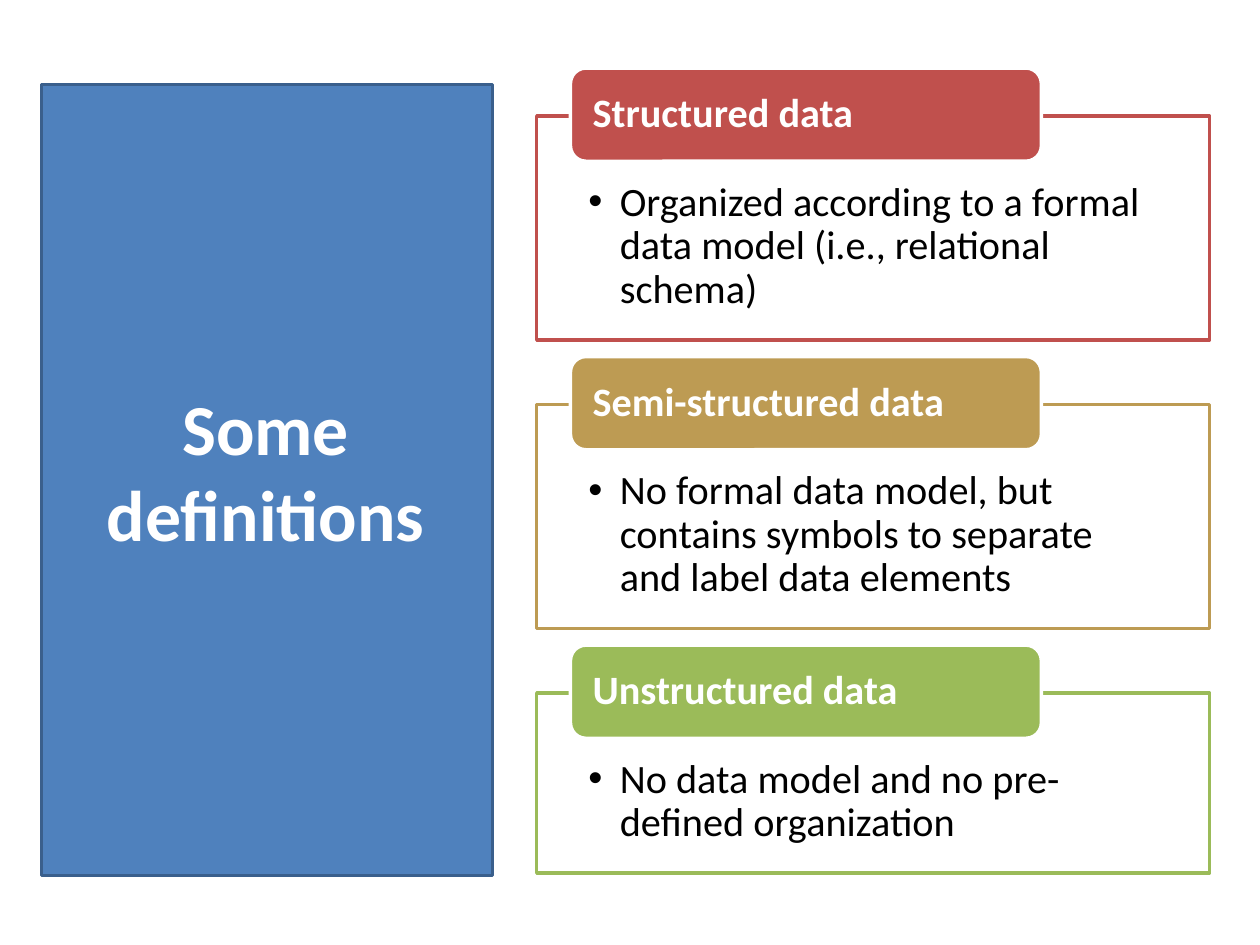
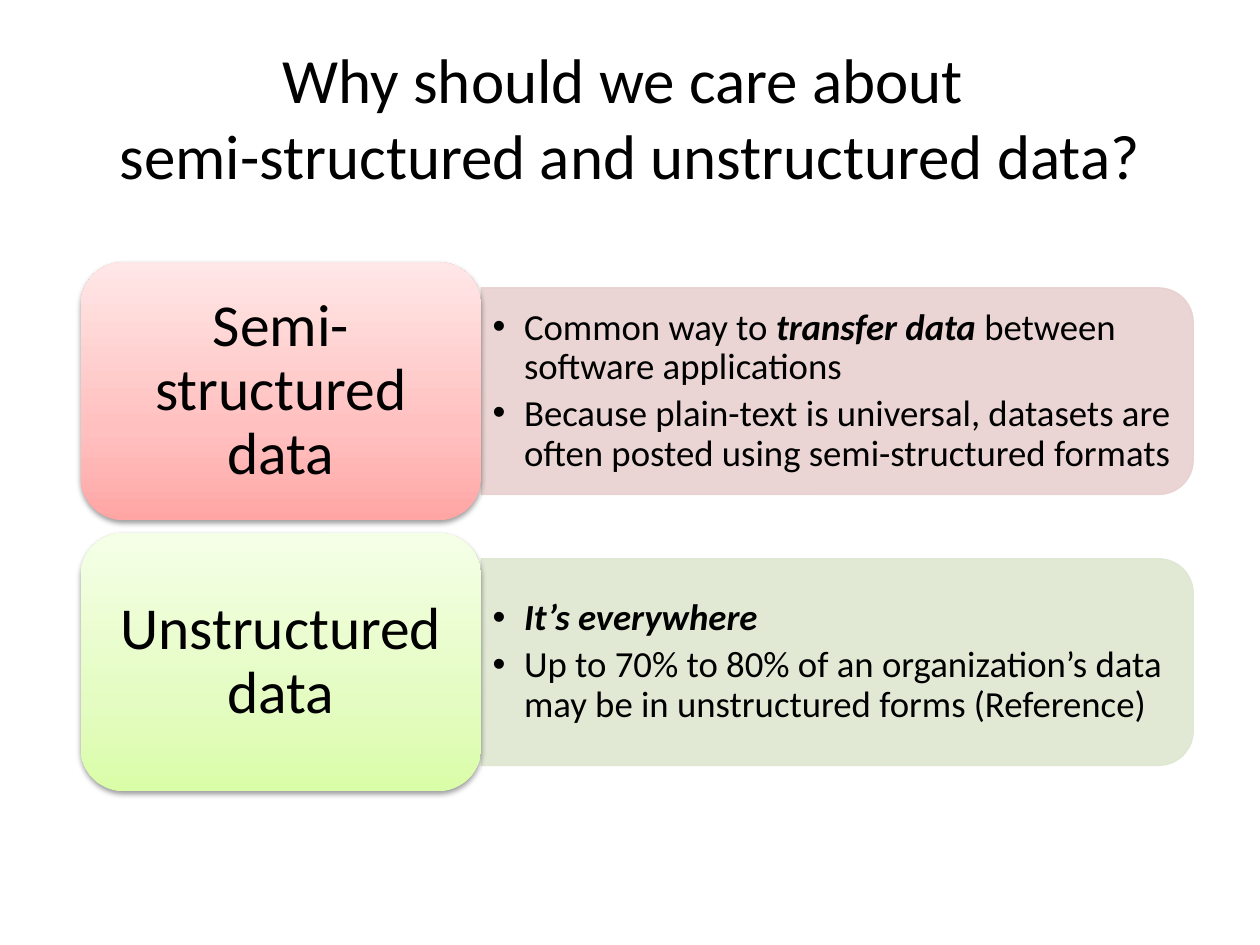
from collections import namedtuple

from lxml import etree
from pptx import Presentation
from pptx.dml.color import RGBColor
from pptx.enum.shapes import MSO_SHAPE as Shape
from pptx.enum.text import MSO_ANCHOR as Anchor, MSO_AUTO_SIZE as AutoSize, PP_ALIGN as Align
from pptx.oxml import parse_xml
from pptx.oxml.ns import nsdecls, qn
from pptx.util import Emu, Inches, Pt

# Slide grid: 100 columns by 75 rows
SLIDE_WIDTH, SLIDE_HEIGHT = Inches(10), Inches(7.5)
COLUMN, ROW = SLIDE_WIDTH / 100, SLIDE_HEIGHT / 75
Box = namedtuple("Box", "left top width height")

FONT = "Calibri"
WHITE = RGBColor(0xFF, 0xFF, 0xFF)
BLACK = RGBColor(0x00, 0x00, 0x00)
BLUE = RGBColor(0x4F, 0x81, 0xBD)
DARK_BLUE = RGBColor(0x3A, 0x5F, 0x8C)
RED = RGBColor(0xC0, 0x50, 0x4D)
OCHRE = RGBColor(0xBD, 0x9B, 0x53)
GREEN = RGBColor(0x9B, 0xBB, 0x59)
PALE_RED = RGBColor(0xE8, 0xD0, 0xD0)
PALE_GREEN = RGBColor(0xDE, 0xE7, 0xD1)
# Gradient colours run from the bottom edge to the top edge
RED_GRADIENT = (RGBColor(0xFF, 0xA6, 0xA5), RGBColor(0xFF, 0xC0, 0xBF), RGBColor(0xFF, 0xE7, 0xE7))
GREEN_GRADIENT = (RGBColor(0xDA, 0xFD, 0xA7), RGBColor(0xE4, 0xFC, 0xC2), RGBColor(0xF5, 0xFF, 0xE7))
GRADIENT_STOPS = (0, 35, 100)

BODY_INSETS = (0.41, 0.52, 0.41, 0.18)
TAB_INSETS = (0.14, 0, 0.14, 0)
BAR_INSETS = (0.09, 0.04, 0.09, 0.04)
PANEL_INSETS = (0.14, 0.07, 0.14, 0.07)


# ---- Shared helpers ----
def to_emu(box):
    return [Emu(round(length * unit)) for length, unit in zip(box, (COLUMN, ROW, COLUMN, ROW))]


def set_opacity(fill_parent, percent):
    """Add an alpha value to each solid colour directly below an element."""
    for color in fill_parent.findall(f"{qn('a:solidFill')}/{qn('a:srgbClr')}"):
        etree.SubElement(color, qn("a:alpha")).set("val", str(percent * 1000))


def add_block(slide, kind, box, fill=None, line=None, line_width=2):
    shape = slide.shapes.add_shape(kind, *to_emu(box))
    shape.shadow.inherit = False
    if fill is not None:
        shape.fill.solid()
        shape.fill.fore_color.rgb = fill
    if line is None:
        shape.line.fill.background()
    else:
        shape.line.color.rgb = line
        shape.line.width = Pt(line_width)
    return shape


def prepare_frame(frame, insets, anchor=Anchor.MIDDLE):
    frame.word_wrap = True
    frame.auto_size = AutoSize.NONE
    frame.vertical_anchor = anchor
    frame.margin_left, frame.margin_top, frame.margin_right, frame.margin_bottom = map(Inches, insets)


def add_run(paragraph, text, size, color=BLACK, bold=False, italic=False):
    run = paragraph.add_run()
    run.text = text
    font = run.font
    font.name, font.size, font.bold, font.italic = FONT, Pt(size), bold, italic
    font.color.rgb = color


def write_label(frame, text, size, color, bold, align):
    paragraph = frame.paragraphs[0]
    paragraph.alignment = align
    paragraph.line_spacing = 0.9
    add_run(paragraph, text, size, color, bold)


def write_bullets(frame, bullets, size):
    """Each bullet is a list of (text, emphasised) pairs."""
    for index, bullet in enumerate(bullets):
        paragraph = frame.add_paragraph() if index else frame.paragraphs[0]
        paragraph.alignment = Align.LEFT
        paragraph.line_spacing = 0.9
        paragraph.space_after = Pt(4)
        properties = paragraph._p.get_or_add_pPr()
        properties.set("marL", str(Inches(0.25)))
        properties.set("indent", str(Inches(-0.25)))
        etree.SubElement(properties, qn("a:buFont")).set("typeface", "Arial")
        etree.SubElement(properties, qn("a:buChar")).set("char", "•")
        for text, emphasised in bullet:
            add_run(paragraph, text, size, bold=emphasised, italic=emphasised)


def set_title(slide, box, lines, size, color, bold=False):
    title = slide.shapes.title
    title.left, title.top, title.width, title.height = to_emu(box)
    prepare_frame(title.text_frame, (0.1, 0.05, 0.1, 0.05))
    paragraph = title.text_frame.paragraphs[0]
    paragraph.alignment = Align.CENTER
    for index, line in enumerate(lines):
        if index:
            paragraph.add_line_break()
        add_run(paragraph, line, size, color, bold)
    return title


# ---- Definitions slide ----
def add_definition(slide, box, term, meaning, color):
    # Outlined body, starting halfway down the tab
    tab_height = 7.4
    drop = 3.8
    body = add_block(slide, Shape.RECTANGLE,
                     Box(box.left, box.top + drop, box.width, box.height - drop), WHITE, color)
    set_opacity(body._element.spPr, 90)
    prepare_frame(body.text_frame, BODY_INSETS, Anchor.TOP)
    write_bullets(body.text_frame, [[(meaning, False)]], 23)
    # Coloured tab with the term
    tab = add_block(slide, Shape.ROUNDED_RECTANGLE,
                    Box(box.left + 0.05 * box.width, box.top, 0.7 * box.width, tab_height), color, WHITE)
    prepare_frame(tab.text_frame, TAB_INSETS)
    write_label(tab.text_frame, term, 23, WHITE, True, Align.LEFT)


def build_definitions_slide(slide):
    # Title panel
    panel = Box(3.3, 6.7, 35.8, 62.8)
    add_block(slide, Shape.RECTANGLE, panel, BLUE, DARK_BLUE)
    title = set_title(slide, Box(panel.left + 3.8, panel.top + 4.4, 28, 52.4),
                      ["Some definitions"], 41, WHITE, True)
    slide.shapes._spTree.append(title._element)  # bring the title in front of its panel
    # Stack of definitions, each as tall as its number of text lines needs
    definitions = [
        ("Structured data", "Organized according to a formal data model (i.e., relational schema)", 3, RED),
        ("Semi-structured data",
         "No formal data model, but contains symbols to separate and label data elements", 3, OCHRE),
        ("Unstructured data", "No data model and no pre-defined organization", 2, GREEN),
    ]
    top, gap = 5.4, 1.3
    for term, meaning, line_count, color in definitions:
        height = 11.1 + 3.5 * line_count
        add_definition(slide, Box(42.6, top, 53.4, height), term, meaning, color)
        top += height + gap


# ---- Reasons slide ----
def style_panel(panel, colors):
    """Give a panel its vertical gradient and a soft shadow below."""
    properties = panel._element.spPr
    stops = "".join(f'<a:gs pos="{position * 1000}"><a:srgbClr val="{color}"/></a:gs>'
                    for position, color in zip(GRADIENT_STOPS, colors))
    gradient = parse_xml(f'<a:gradFill {nsdecls("a")} rotWithShape="1"><a:gsLst>{stops}</a:gsLst>'
                         '<a:lin ang="16200000" scaled="1"/></a:gradFill>')
    properties.find(qn("a:prstGeom")).addnext(gradient)
    shadow = parse_xml(f'<a:outerShdw {nsdecls("a")} blurRad="{Pt(3.1)}" dist="{Pt(1.6)}" dir="5400000" '
                       'rotWithShape="0"><a:srgbClr val="000000"><a:alpha val="38000"/></a:srgbClr>'
                       '</a:outerShdw>')
    properties.find(qn("a:effectLst")).append(shadow)


def add_reason(slide, box, heading, bullets, bar_color, gradient):
    panel_width = 0.36 * box.width
    bar = Box(box.left + panel_width, box.top + 0.1 * box.height,
              box.width - panel_width, 0.8 * box.height)
    # Bar turned a quarter so that its rounded corners face right
    turned = Box(bar.left + (bar.width - bar.height) / 2, bar.top + (bar.height - bar.width) / 2,
                 bar.height, bar.width)
    shape = add_block(slide, Shape.ROUND_2_SAME_RECTANGLE, turned, bar_color, bar_color, 0.75)
    shape.rotation = 90
    set_opacity(shape._element.spPr, 90)
    set_opacity(shape._element.spPr.find(qn("a:ln")), 90)
    # Bullets on the bar
    text_box = slide.shapes.add_textbox(*to_emu(
        Box(bar.left, bar.top + 0.05 * bar.height, bar.width - 0.8, 0.9 * bar.height)))
    prepare_frame(text_box.text_frame, BAR_INSETS)
    write_bullets(text_box.text_frame, bullets, 21)
    # Heading panel
    panel = add_block(slide, Shape.ROUNDED_RECTANGLE,
                      Box(box.left, box.top, panel_width, box.height))
    style_panel(panel, gradient)
    prepare_frame(panel.text_frame, PANEL_INSETS)
    write_label(panel.text_frame, heading, 34, BLACK, False, Align.CENTER)


def build_reasons_slide(slide):
    set_title(slide, Box(5, 3, 90, 12.5),
              ["Why should we care about ", "semi-structured and unstructured data?"], 36, BLACK)
    reasons = [
        ("Semi-structured data",
         [[("Common way to ", False), ("transfer data", True), (" between software applications", False)],
          [("Because plain-text is universal, datasets are often posted using semi-structured formats",
            False)]],
         PALE_RED, RED_GRADIENT),
        ("Unstructured data",
         [[("It’s everywhere", True)],
          [("Up to 70% to 80% of an organization’s data may be in unstructured forms (Reference)", False)]],
         PALE_GREEN, GREEN_GRADIENT),
    ]
    for index, reason in enumerate(reasons):
        add_reason(slide, Box(6.4, 20.8 + 21.5 * index, 88.3, 20.5), *reason)


def main():
    presentation = Presentation()
    presentation.slide_width, presentation.slide_height = SLIDE_WIDTH, SLIDE_HEIGHT
    title_only = presentation.slide_layouts[5]
    for build in (build_definitions_slide, build_reasons_slide):
        build(presentation.slides.add_slide(title_only))
    presentation.save("out.pptx")


if __name__ == "__main__":
    main()
